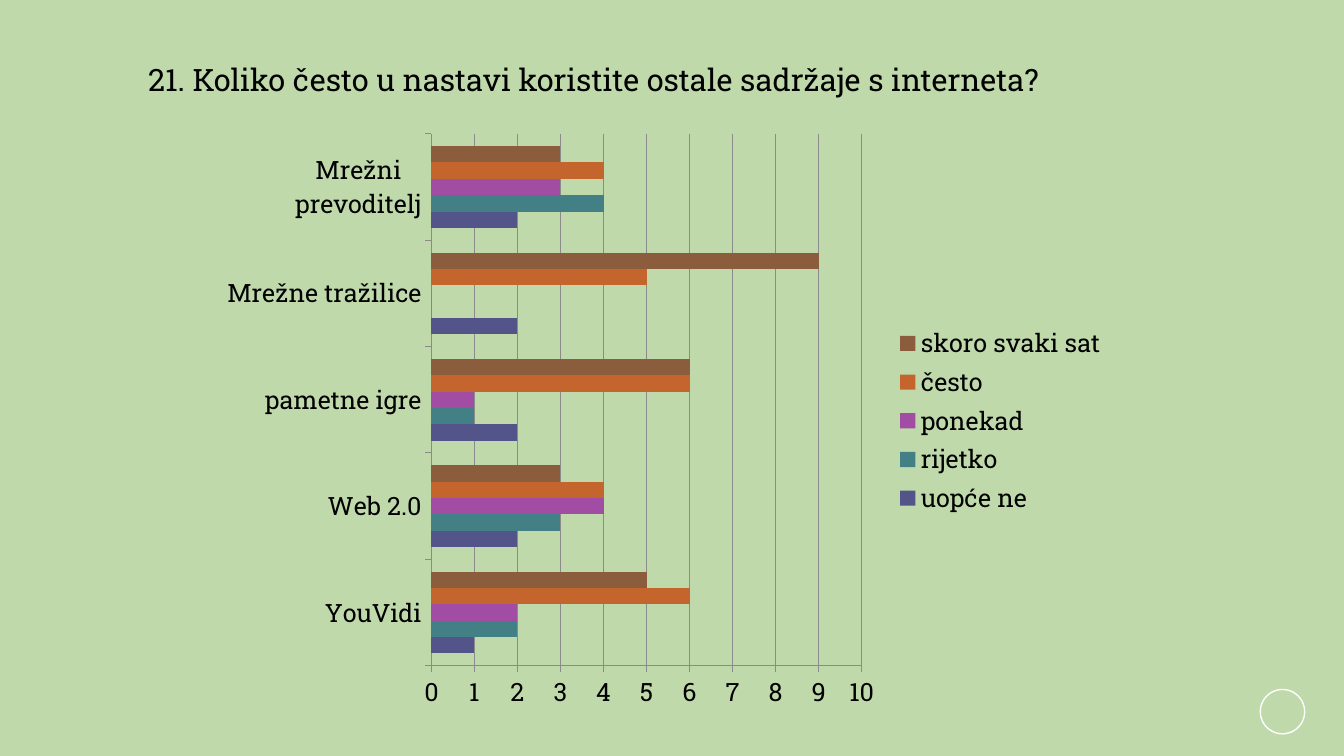
from lxml import etree
from pptx import Presentation
from pptx.chart.data import CategoryChartData
from pptx.dml.color import RGBColor
from pptx.enum.chart import XL_CHART_TYPE, XL_LEGEND_POSITION, XL_TICK_MARK
from pptx.enum.shapes import MSO_SHAPE
from pptx.oxml.ns import qn
from pptx.util import Inches, Pt

FONT = "Roboto Slab"
BACKGROUND = RGBColor(0xBF, 0xD9, 0xAB)
BLACK = RGBColor(0, 0, 0)
WHITE = RGBColor(0xFF, 0xFF, 0xFF)
GRAY = RGBColor(0x8B, 0x8B, 0x8B)

CATEGORIES = ["YouVidi", "Web 2.0", "pametne igre", "Mrežne tražilice", "Mrežni prevoditelj"]
ANSWERS = [
    ("uopće ne", (1, 2, 2, 2, 2), RGBColor(0x53, 0x54, 0x8A)),
    ("rijetko", (2, 3, 1, 0, 4), RGBColor(0x43, 0x80, 0x86)),
    ("ponekad", (2, 4, 1, 0, 3), RGBColor(0xA0, 0x4D, 0xA3)),
    ("često", (6, 4, 6, 5, 4), RGBColor(0xC4, 0x65, 0x2D)),
    ("skoro svaki sat", (5, 3, 6, 9, 3), RGBColor(0x8B, 0x5D, 0x3D)),
]


def style_font(font, size):
    font.name = FONT
    font.size = Pt(size)
    font.bold = False
    font.color.rgb = BLACK


def style_line(line):
    line.color.rgb = GRAY
    line.width = Pt(0.75)


def add_page_ring(page, left, top, size):
    ring = page.shapes.add_shape(
        MSO_SHAPE.OVAL, Inches(left), Inches(top), Inches(size), Inches(size))
    ring.shadow.inherit = False
    ring.fill.background()
    ring.line.color.rgb = WHITE
    ring.line.width = Pt(1)


def add_question(page, left, top, width, height):
    box = page.shapes.add_textbox(Inches(left), Inches(top), Inches(width), Inches(height))
    box.text_frame.word_wrap = True
    span = box.text_frame.paragraphs[0].add_run()
    span.text = "21. Koliko često u nastavi koristite ostale sadržaje s interneta?"
    style_font(span.font, 22)


def set_plot_layout(chart, x, y, w, h):
    """Fix the inner plot area, in fractions of the chart's size."""
    plot_area = chart.plots[0]._element.getparent()
    for old in plot_area.findall(qn("c:layout")):
        plot_area.remove(old)
    layout = etree.Element(qn("c:layout"))
    manual = etree.SubElement(layout, qn("c:manualLayout"))
    settings = [("layoutTarget", "inner"), ("xMode", "edge"), ("yMode", "edge"),
                ("x", x), ("y", y), ("w", w), ("h", h)]
    for tag, value in settings:
        etree.SubElement(manual, qn(f"c:{tag}")).set("val", str(value))
    plot_area.insert(0, layout)


def add_answer_chart(page, left, top, width, height):
    data = CategoryChartData(number_format="0")
    data.categories = CATEGORIES
    for name, values, _ in ANSWERS:
        data.add_series(name, values)
    chart = page.shapes.add_chart(
        XL_CHART_TYPE.BAR_CLUSTERED, Inches(left), Inches(top),
        Inches(width), Inches(height), data).chart
    style_font(chart.font, 18)
    chart.has_title = False
    set_plot_layout(chart, 0.235, 0.02, 0.48, 0.89)

    plot = chart.plots[0]
    plot.gap_width = 150
    plot.vary_by_categories = False
    for series, (_, _, color) in zip(plot.series, ANSWERS):
        series.format.fill.solid()
        series.format.fill.fore_color.rgb = color

    for axis in (chart.category_axis, chart.value_axis):
        axis.major_tick_mark = XL_TICK_MARK.OUTSIDE
        axis.minor_tick_mark = XL_TICK_MARK.NONE
        style_line(axis.format.line)
        style_font(axis.tick_labels.font, 18)
    scale = chart.value_axis
    scale.minimum_scale, scale.maximum_scale, scale.major_unit = 0, 10, 1
    scale.has_major_gridlines = True
    style_line(scale.major_gridlines.format.line)

    chart.has_legend = True
    chart.legend.position = XL_LEGEND_POSITION.RIGHT
    chart.legend.include_in_layout = False
    style_font(chart.legend.font, 18)


def main():
    deck = Presentation()
    deck.slide_width = Inches(13.33)
    deck.slide_height = Inches(7.5)
    page = deck.slides.add_slide(deck.slide_layouts[6])
    page.background.fill.solid()
    page.background.fill.fore_color.rgb = BACKGROUND
    add_page_ring(page, 12.5, 6.84, 0.44)
    add_question(page, 1.37, 0.55, 9.95, 0.47)
    add_answer_chart(page, 2.19, 1.21, 8.89, 5.93)
    deck.save("out.pptx")


if __name__ == "__main__":
    main()
